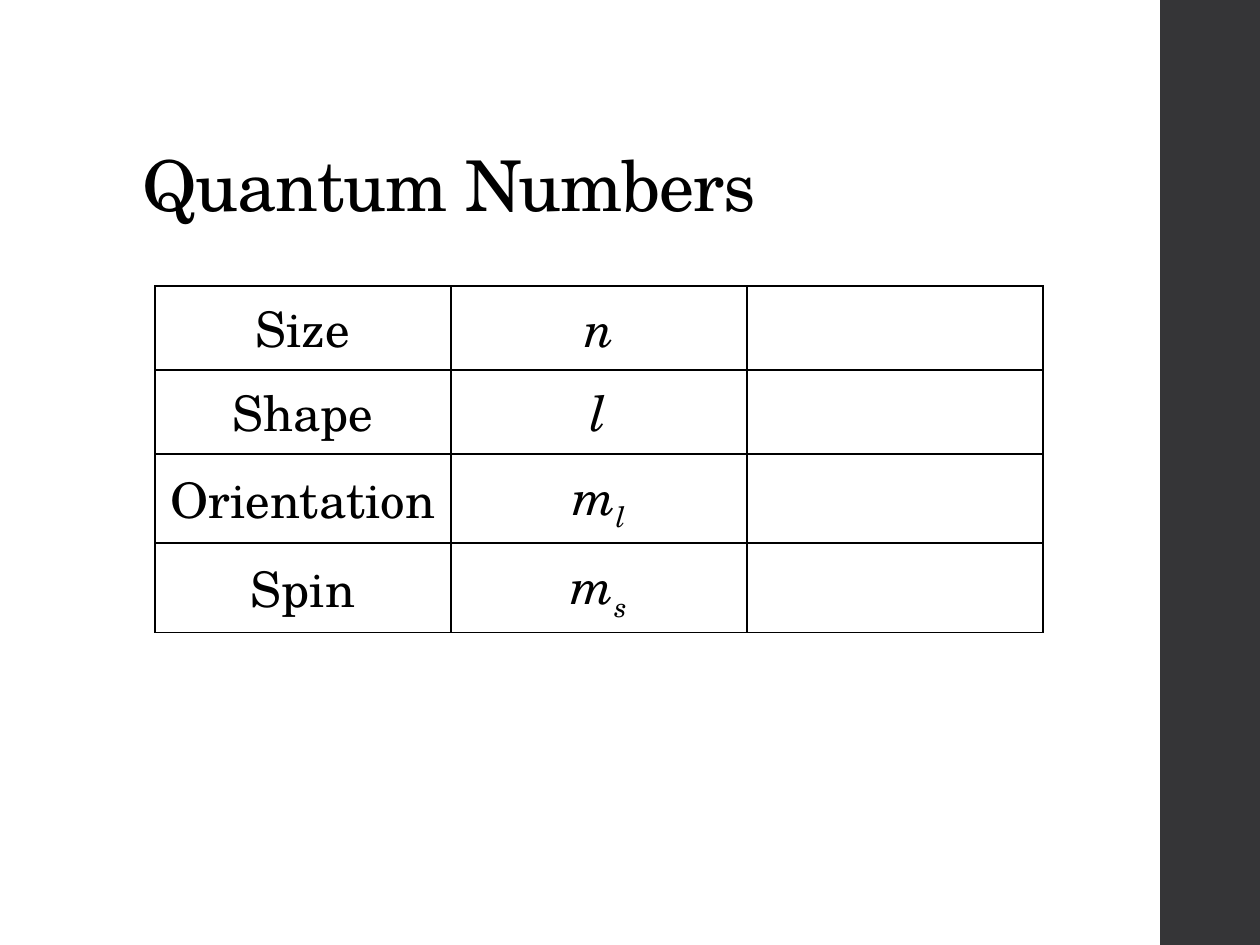
from dataclasses import dataclass

from lxml import etree
from pptx import Presentation
from pptx.dml.color import RGBColor
from pptx.enum.shapes import MSO_SHAPE
from pptx.enum.text import MSO_ANCHOR, PP_ALIGN
from pptx.oxml.ns import qn
from pptx.util import Cm, Pt

RECT = MSO_SHAPE.RECTANGLE
MIDDLE, BOTTOM = MSO_ANCHOR.MIDDLE, MSO_ANCHOR.BOTTOM
CENTER = PP_ALIGN.CENTER


@dataclass(frozen=True)
class Theme:
    font: str = "TeX Gyre Schola"
    ink: str = "000000"
    bar: str = "353537"
    title: int = 40
    body: int = 28
    rule: int = 1


@dataclass(frozen=True)
class Number:
    name: str
    symbol: str
    sub: str = ""
    height: float = 1.69


THEME = Theme()
WIDE, HIGH = 25.4, 19.05
BAR_LEFT = 23.39
COL = 5.97
NUMBERS = [
    Number("Size", "n"),
    Number("Shape", "l"),
    Number("Orientation", "m", "l", 1.8),
    Number("Spin", "m", "s", 1.8),
]


def style(run, size: int, slant: bool = False) -> None:
    font = run.font
    font.name, font.size, font.italic = THEME.font, Pt(size), slant
    font.color.rgb = RGBColor.from_string(THEME.ink)


def frame(cell) -> None:
    """Clear the cell's fill and rule all four sides."""
    cell.fill.background()
    props = cell._tc.get_or_add_tcPr()
    for spot, side in enumerate("LRTB"):
        line = etree.Element(qn(f"a:ln{side}"), w=str(Pt(THEME.rule)))
        fill = etree.SubElement(line, qn("a:solidFill"))
        etree.SubElement(fill, qn("a:srgbClr"), val=THEME.ink)
        props.insert(spot, line)


def write(cell, text: str, sub: str = "", slant: bool = False) -> None:
    cell.text_frame.text = text
    cell.vertical_anchor = MIDDLE
    para = cell.text_frame.paragraphs[0]
    para.alignment = CENTER
    if sub:
        low = para.add_run()
        low.text = sub
        low.font._element.set("baseline", "-25000")
    for run in para.runs:
        style(run, THEME.body, slant)


def add_bar(slide) -> None:
    bar = slide.shapes.add_shape(RECT, Cm(BAR_LEFT), 0, Cm(WIDE - BAR_LEFT), Cm(HIGH))
    bar.shadow.inherit = False
    bar.fill.solid()
    bar.fill.fore_color.rgb = RGBColor.from_string(THEME.bar)
    bar.line.fill.background()


def add_title(slide, text: str) -> None:
    box = slide.shapes.add_textbox(Cm(2.62), Cm(1.02), Cm(20.19), Cm(3.68))
    body = box.text_frame
    body.word_wrap = True
    body.vertical_anchor = BOTTOM
    body.text = text
    para = body.paragraphs[0]
    para.line_spacing = 0.9
    run = para.runs[0]
    style(run, THEME.title)
    run.font._element.set("spc", "-50")


def add_grid(slide, numbers: list[Number]) -> None:
    total = sum(number.height for number in numbers)
    table = slide.shapes.add_table(
        len(numbers), 3, Cm(3.12), Cm(5.77), Cm(3 * COL), Cm(total)
    ).table
    table.first_row = table.horz_banding = False
    for row, number in zip(table.rows, numbers):
        row.height = Cm(number.height)
        for cell in row.cells:
            frame(cell)
        write(row.cells[0], number.name)
        write(row.cells[1], number.symbol, number.sub, slant=True)


def main() -> None:
    deck = Presentation()
    deck.slide_width, deck.slide_height = Cm(WIDE), Cm(HIGH)
    slide = deck.slides.add_slide(deck.slide_layouts[6])
    add_bar(slide)
    add_title(slide, "Quantum Numbers")
    add_grid(slide, NUMBERS)
    deck.save("out.pptx")


if __name__ == "__main__":
    main()
